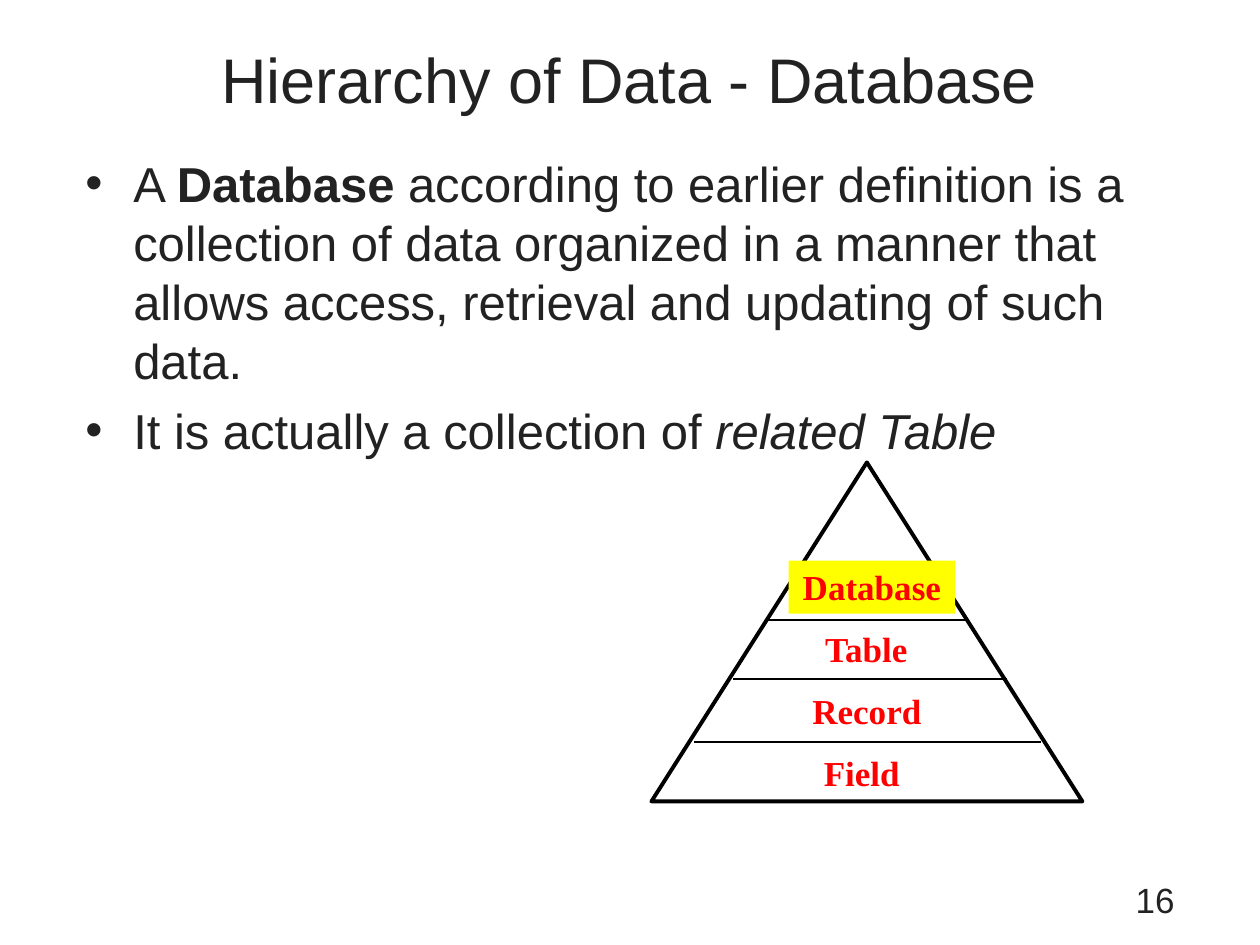
from lxml import etree
from pptx import Presentation
from pptx.dml.color import RGBColor
from pptx.enum.shapes import MSO_CONNECTOR, MSO_SHAPE
from pptx.enum.text import MSO_ANCHOR, PP_ALIGN
from pptx.oxml.ns import qn
from pptx.util import Inches, Pt

BODY = dict(name="Arial", color="222222", bold=False)
LABEL = dict(name="Times New Roman", color="FF0000", bold=True, size=Pt(20))


def rgb(color):
    return RGBColor.from_string(color)


def add_run(p, text, **fmt):
    r = p.add_run()
    r.text = text
    r.font.color.rgb = rgb(fmt.pop("color"))
    for key, value in fmt.items():
        setattr(r.font, key, value)


def set_frame(tf, inset_x=0.1, inset_y=0.05, anchor=MSO_ANCHOR.TOP):
    fmt = dict(word_wrap=True, vertical_anchor=anchor,
               margin_left=Inches(inset_x), margin_right=Inches(inset_x),
               margin_top=Inches(inset_y), margin_bottom=Inches(inset_y))
    for key, value in fmt.items():
        setattr(tf, key, value)


def add_text(s, box, text, align, inset_x=0.1, inset_y=0.05, fill=None, **fmt):
    """Add a one-line text box, or a filled rectangle when a fill is given."""
    box = [Inches(v) for v in box]
    if fill:
        sp = s.shapes.add_shape(MSO_SHAPE.RECTANGLE, *box)
        sp.shadow.inherit = False
        sp.fill.solid()
        sp.fill.fore_color.rgb = rgb(fill)
        sp.line.fill.background()
    else:
        sp = s.shapes.add_textbox(*box)
    set_frame(sp.text_frame, inset_x, inset_y)
    p = sp.text_frame.paragraphs[0]
    p.alignment = align
    add_run(p, text, **fmt)


def set_title(s, box, text):
    title = s.shapes.title
    for key, value in zip(("left", "top", "width", "height"), box):
        setattr(title, key, Inches(value))
    set_frame(title.text_frame, anchor=MSO_ANCHOR.MIDDLE)
    p = title.text_frame.paragraphs[0]
    p.alignment = PP_ALIGN.CENTER
    add_run(p, text, size=Pt(36), **BODY)


def add_bullets(s, box, items):
    tf = s.shapes.add_textbox(*[Inches(v) for v in box]).text_frame
    set_frame(tf)
    for i, runs in enumerate(items):
        p = tf.add_paragraph() if i else tf.paragraphs[0]
        p.space_before = Pt(6.4)
        pPr = p._p.get_or_add_pPr()
        pPr.set("marL", str(Inches(0.38)))
        pPr.set("indent", str(-Inches(0.38)))
        etree.SubElement(pPr, qn("a:buFont")).set("typeface", "Arial")
        etree.SubElement(pPr, qn("a:buChar")).set("char", "•")
        for text, style in runs:
            add_run(p, text, **{**BODY, "size": Pt(28), **style})


def add_divider(s, x1, x2, y):
    line = s.shapes.add_connector(MSO_CONNECTOR.STRAIGHT, Inches(x1), Inches(y),
                                  Inches(x2), Inches(y))
    line.line.color.rgb = rgb("000000")
    line.line.width = Pt(0.75)
    etree.SubElement(line._element.spPr, qn("a:effectLst"))


def add_pyramid(s, box, dividers, labels):
    """Dividers are (x1, x2, y) and labels (text, x, y, width, fill), from the box corner."""
    left, top = box[:2]
    sp = s.shapes.add_shape(MSO_SHAPE.FLOWCHART_EXTRACT, *[Inches(v) for v in box])
    sp.shadow.inherit = False
    sp.fill.background()
    sp.line.color.rgb = rgb("000000")
    sp.line.width = Pt(2.25)
    for x1, x2, y in dividers:
        add_divider(s, left + x1, left + x2, top + y)
    for text, x, y, width, fill in labels:
        add_text(s, (left + x, top + y, width, 0.42), text, PP_ALIGN.CENTER,
                 0.08, 0.04, fill, **LABEL)


def main():
    prs = Presentation()
    prs.slide_width, prs.slide_height = Inches(10), Inches(7.5)
    s = prs.slides.add_slide(prs.slide_layouts[5])
    set_title(s, (0.58, 0, 8.83, 1.25), "Hierarchy of Data - Database")
    add_bullets(s, (0.58, 1.17, 8.83, 5), [
        [("A ", {}), ("Database ", {"bold": True}),
         ("according to earlier definition is a collection of data organized in a "
          "manner that allows access, retrieval and updating of such data.", {})],
        [("It is actually a collection of ", {}), ("related Table", {"italic": True})],
    ])
    add_text(s, (7.17, 6.92, 2.25, 0.42), "16", PP_ALIGN.RIGHT, size=Pt(20), **BODY)
    add_pyramid(
        s, (5.17, 3.67, 3.42, 2.69),
        dividers=[(0.92, 2.5, 1.25), (0.65, 2.82, 1.72), (0.34, 3.09, 2.22)],
        labels=[("Database", 1.09, 0.78, 1.32, "FFFF00"), ("Table", 0.83, 1.27, 1.75, None),
                ("Record", 0.5, 1.76, 2.42, None), ("Field", 0.17, 2.25, 3, None)])
    prs.save("out.pptx")


if __name__ == "__main__":
    main()
